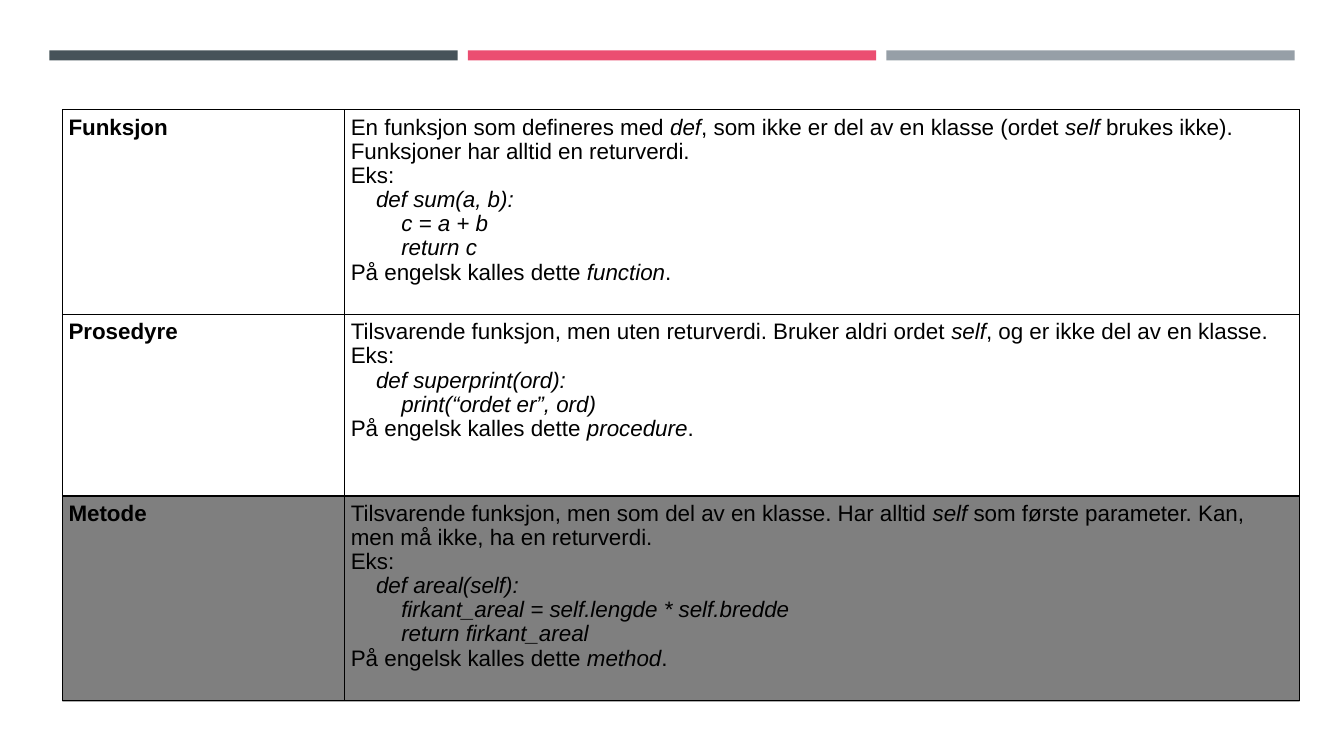
"""Build a slide with a table that compares function, procedure and method."""
from lxml import etree
from pptx import Presentation
from pptx.dml.color import RGBColor
from pptx.enum.shapes import MSO_SHAPE
from pptx.oxml.ns import qn
from pptx.util import Inches, Pt

RECT = MSO_SHAPE.RECTANGLE
BARS = ["465359", "EB4E71", "969FA7"]
COLS = [2.8, 9.47]
HEIGHTS = [2.03, 1.8, 2.03]
LEFT, TOP = 0.62, 1.09
FONT = {"name": "Arial", "size": Pt(16)}
INDENT = 0.25
ROWS = [
    ("Funksjon", [
        (0, "En funksjon som defineres med |def|, som ikke er del av en klasse "
            "(ordet |self| brukes ikke). Funksjoner har alltid en returverdi."),
        (0, "Eks:"),
        (1, "|def sum(a, b):"),
        (2, "|c = a + b"),
        (2, "|return c"),
        (0, "På engelsk kalles dette |function|."),
    ]),
    ("Prosedyre", [
        (0, "Tilsvarende funksjon, men uten returverdi. Bruker aldri ordet |self|, "
            "og er ikke del av en klasse."),
        (0, "Eks:"),
        (1, "|def superprint(ord):"),
        (2, "|print(“ordet er”, ord)"),
        (0, "På engelsk kalles dette |procedure|."),
    ]),
    ("Metode", [
        (0, "Tilsvarende funksjon, men som del av en klasse. Har alltid |self| "
            "som første parameter. Kan, men må ikke, ha en returverdi."),
        (0, "Eks:"),
        (1, "|def areal(self):"),
        (2, "|firkant_areal = self.lengde * self.bredde"),
        (2, "|return firkant_areal"),
        (0, "På engelsk kalles dette |method|."),
    ]),
]


def rgb(value):
    return RGBColor.from_string(value)


def add_rect(s, x, y, w, h, color):
    sp = s.shapes.add_shape(RECT, Inches(x), Inches(y), Inches(w), Inches(h))
    sp.shadow.inherit = False
    sp.fill.solid()
    sp.fill.fore_color.rgb = rgb(color)
    sp.line.fill.background()
    return sp


prs = Presentation()
prs.slide_width, prs.slide_height = Inches(13.33), Inches(7.5)
s = prs.slides.add_slide(prs.slide_layouts[6])

for i, color in enumerate(BARS):
    add_rect(s, 0.49 + i * 4.15, 0.5, 4.05, 0.1, color)

table = s.shapes.add_table(len(ROWS), len(COLS), Inches(LEFT), Inches(TOP),
                           Inches(sum(COLS)), Inches(sum(HEIGHTS))).table
table.first_row = table.horz_banding = False
for col, width in zip(table.columns, COLS):
    col.width = Inches(width)

for row, height, (term, lines) in zip(table.rows, HEIGHTS, ROWS):
    row.height = Inches(height)
    for cell, content, bold in zip(row.cells, [[(0, term)], lines], [True, False]):
        for side in ("left", "right", "top", "bottom"):
            setattr(cell, f"margin_{side}", Inches(0.06))
        tcPr = cell._tc.get_or_add_tcPr()
        for tag in ("a:lnL", "a:lnR", "a:lnT", "a:lnB"):
            ln = etree.SubElement(tcPr, qn(tag), w=str(Pt(1)))
            solid = etree.SubElement(ln, qn("a:solidFill"))
            etree.SubElement(solid, qn("a:srgbClr"), val="000000")
        cell.fill.background()
        tf = cell.text_frame
        for n, (level, text) in enumerate(content):
            p = tf.add_paragraph() if n else tf.paragraphs[0]
            p.line_spacing = 0.97
            pPr = p._p.get_or_add_pPr()
            pPr.set("marL", str(Inches(level * INDENT)))
            pPr.set("indent", "0")
            for k, part in enumerate(text.split("|")):
                if part:
                    r = p.add_run()
                    r.text = part
                    for key, value in {**FONT, "bold": bold, "italic": k % 2 == 1}.items():
                        setattr(r.font, key, value)
                    r.font.color.rgb = rgb("000000")

shade = add_rect(s, LEFT, 4.92, sum(COLS), 2.04, "000000")
clr = shade.fill._xPr.find(qn("a:solidFill")).find(qn("a:srgbClr"))
etree.SubElement(clr, qn("a:alpha"), val="50000")

prs.save("out.pptx")
